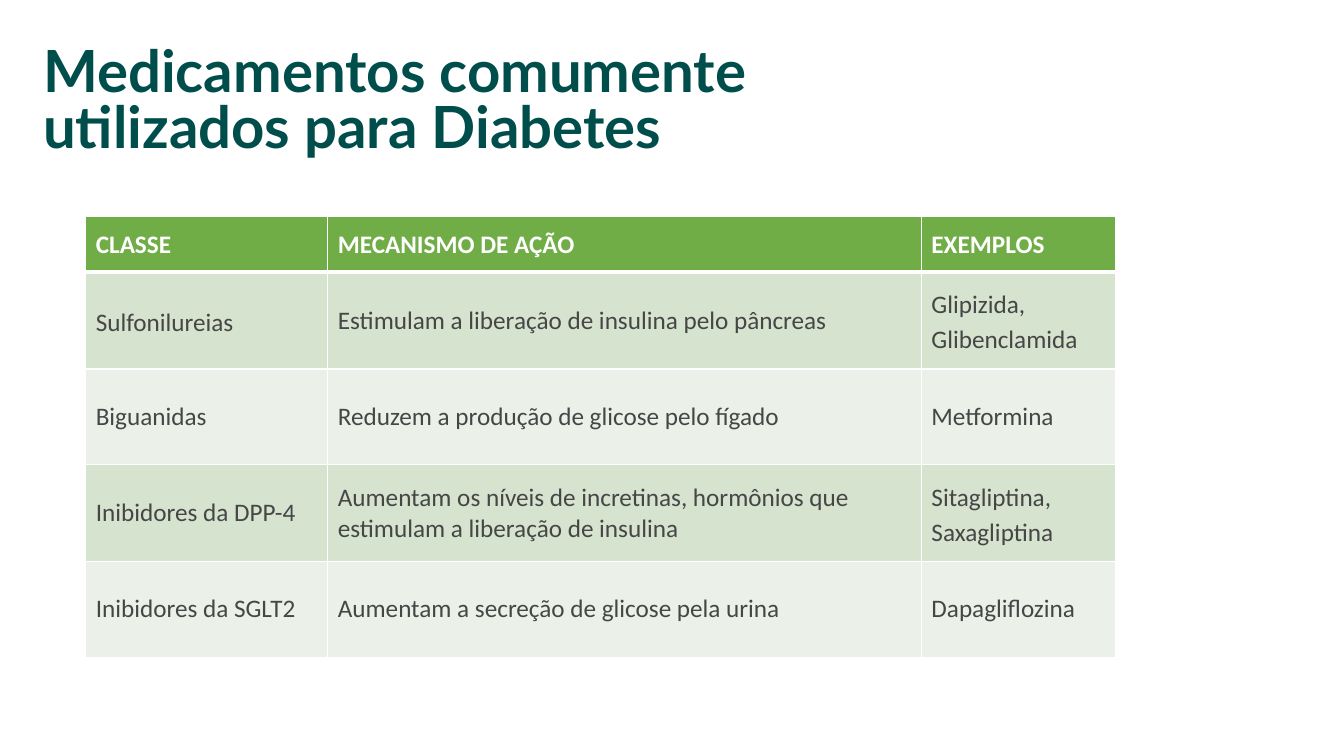
import pptx
import pptx.util
import pptx.dml.color
import pptx.enum.text
import pptx.oxml.ns
import lxml.etree

Cm, Pt = pptx.util.Cm, pptx.util.Pt
MIDDLE = pptx.enum.text.MSO_ANCHOR.MIDDLE

TITLE = ["Medicamentos comumente", "utilizados para Diabetes"]
HEADER = ["CLASSE", "MECANISMO DE AÇÃO", "EXEMPLOS"]
DRUGS = [
    ["Sulfonilureias", "Estimulam a liberação de insulina pelo pâncreas",
     "Glipizida,\nGlibenclamida"],
    ["Biguanidas", "Reduzem a produção de glicose pelo fígado", "Metformina"],
    ["Inibidores da DPP-4",
     "Aumentam os níveis de incretinas, hormônios que\nestimulam a liberação de insulina",
     "Sitagliptina,\nSaxagliptina"],
    ["Inibidores da SGLT2", "Aumentam a secreção de glicose pela urina", "Dapagliflozina"],
]
SPACED_CELLS = {(1, 0), (1, 2), (3, 2)}
COL_WIDTHS = [6.1, 14.96, 4.9]
ROW_HEIGHTS = [1.4, 2.44, 2.41, 2.44, 2.41]
COLORS = {"title": "004E4C", "header": "70AD47", "odd": "D5E3CF", "even": "EBF1E9",
          "body": "464646", "white": "FFFFFF"}


def rgb(name):
    return pptx.dml.color.RGBColor.from_string(COLORS[name])


def write(tf, lines, font, size, color, bold, spacing=None):
    tf.text = "\n".join(lines)
    tf.vertical_anchor = MIDDLE
    for p in tf.paragraphs:
        p.font.name, p.font.size, p.font.bold = font, Pt(size), bold
        p.font.color.rgb = rgb(color)
        if spacing:
            p.line_spacing = Pt(spacing)


def add_borders(cell, top, bottom):
    """Draw white cell borders; top and bottom are widths in points."""
    tc_pr = cell._tc.get_or_add_tcPr()
    qn = pptx.oxml.ns.qn
    for side, width in (("L", 1), ("R", 1), ("T", top), ("B", bottom)):
        ln = lxml.etree.SubElement(tc_pr, qn("a:ln" + side), w=str(Pt(width)))
        fill = lxml.etree.SubElement(ln, qn("a:solidFill"))
        lxml.etree.SubElement(fill, qn("a:srgbClr"), val=COLORS["white"])


def add_title(slide):
    tf = slide.shapes.add_textbox(Cm(1.09), Cm(0.79), Cm(21.29), Cm(3.66)).text_frame
    tf.word_wrap = True
    tf.margin_left = tf.margin_right = tf.margin_top = tf.margin_bottom = 0
    write(tf, TITLE, "Lato", 41.5, "title", True, 40)


def add_drug_table(slide):
    rows = [HEADER] + DRUGS
    table = slide.shapes.add_table(
        len(rows), len(HEADER), Cm(2.16), Cm(5.46),
        Cm(sum(COL_WIDTHS)), Cm(sum(ROW_HEIGHTS))).table
    for column, width in zip(table.columns, COL_WIDTHS):
        column.width = Cm(width)
    for i, (row, height) in enumerate(zip(rows, ROW_HEIGHTS)):
        table.rows[i].height = Cm(height)
        is_header = i == 0
        fill = "header" if is_header else "odd" if i % 2 else "even"
        for j, text in enumerate(row):
            cell = table.cell(i, j)
            write(cell.text_frame, text.split("\n"), "Calibri", 18,
                  "white" if is_header else "body", is_header,
                  25 if (i, j) in SPACED_CELLS else None)
            cell.vertical_anchor = MIDDLE
            add_borders(cell, 3 if i == 1 else 1, 3 if is_header else 1)
            cell.fill.solid()
            cell.fill.fore_color.rgb = rgb(fill)


def main():
    prs = pptx.Presentation()
    prs.slide_width, prs.slide_height = Cm(33.87), Cm(19.05)
    slide = prs.slides.add_slide(prs.slide_layouts[6])
    add_title(slide)
    add_drug_table(slide)
    prs.save("out.pptx")


if __name__ == "__main__":
    main()
